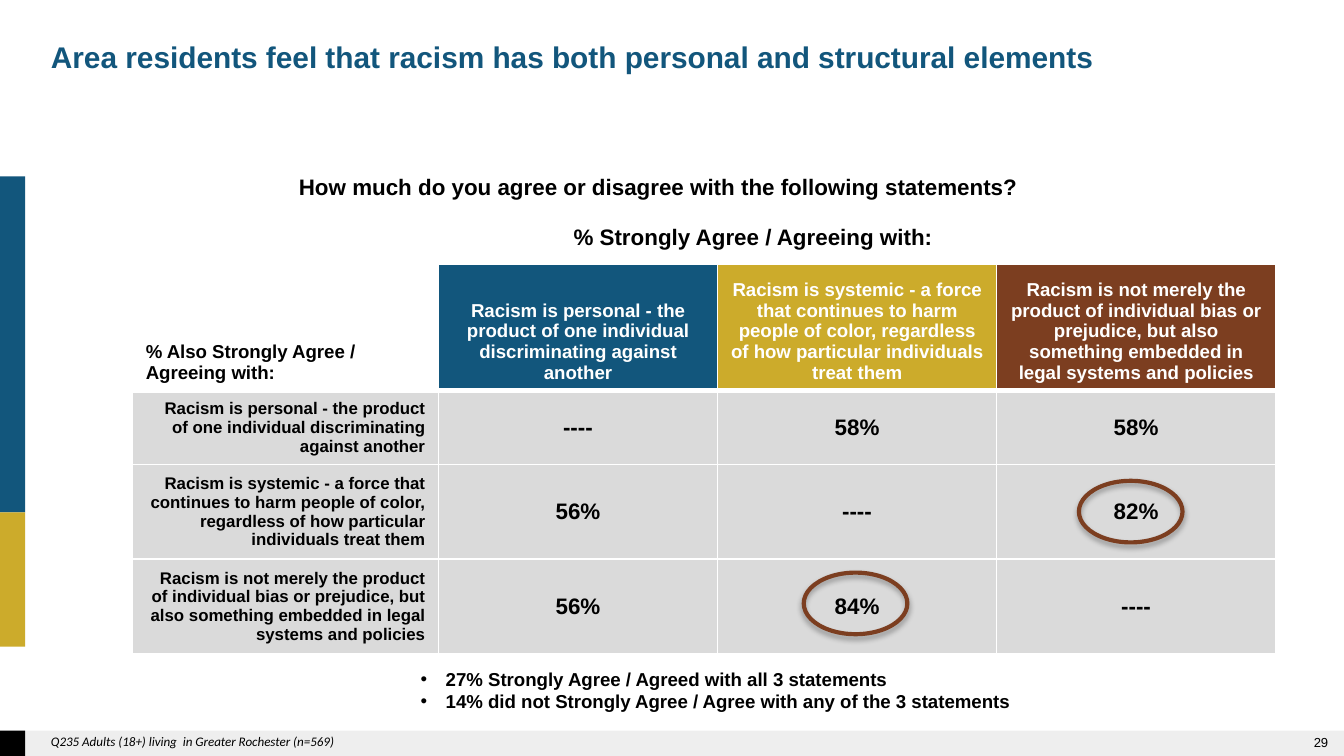
from pptx import Presentation
from pptx import util as u
from pptx.dml.color import RGBColor
from pptx.enum import shapes, text
from pptx.oxml import parse_xml
from pptx.oxml.ns import nsdecls, qn

INK = {"blue": "12567C", "gold": "CCAB2B", "rust": "7C3E20", "gray": "DADADA",
       "foot": "595959", "black": "000000", "white": "FFFFFF"}
SIDE = {"l": text.PP_ALIGN.LEFT, "c": text.PP_ALIGN.CENTER, "r": text.PP_ALIGN.RIGHT}
LEVEL = {"t": text.MSO_ANCHOR.TOP, "m": text.MSO_ANCHOR.MIDDLE, "b": text.MSO_ANCHOR.BOTTOM}


class Deck:
    """Holds the style and the current slide, and draws each kind of element."""

    def __init__(self, wide, high):
        self.show = Presentation()
        self.show.slide_width, self.show.slide_height = u.Pt(wide), u.Pt(high)
        self.slide = self.show.slides.add_slide(self.show.slide_layouts[6])
        self.shapes = self.slide.shapes

    def color(self, name):
        return RGBColor.from_string(INK[name])

    def xml(self, body):
        return parse_xml(body.replace(">", f" {nsdecls('a')}>", 1))

    def add_run(self, para, words, size, ink="black", side="l", bold=True, font="Arial"):
        para.alignment = SIDE[side]
        run = para.add_run()
        run.text = words
        run.font.name, run.font.size = font, u.Pt(size)
        run.font.bold, run.font.italic = bold, font == "Calibri"
        run.font.color.rgb = self.color(ink)

    def label(self, box, lines, size, level="t", wrap=True, bullet=False, **look):
        frame = self.shapes.add_textbox(*map(u.Pt, box)).text_frame
        frame.word_wrap, frame.vertical_anchor = wrap, LEVEL[level]
        for i, words in enumerate(lines):
            para = frame.add_paragraph() if i else frame.paragraphs[0]
            if bullet:
                props = para._p.get_or_add_pPr()
                props.set("marL", str(u.Pt(13.5)))
                props.set("indent", str(u.Pt(-13.5)))
                props.append(self.xml('<a:buFont typeface="Arial"></a:buFont>'))
                props.append(self.xml('<a:buChar char="•"></a:buChar>'))
            self.add_run(para, words, size, **look)

    def bar(self, box, ink, alpha=None):
        rect = self.shapes.add_shape(shapes.MSO_SHAPE.RECTANGLE, *map(u.Pt, box))
        rect.shadow.inherit = False
        rect.fill.solid()
        rect.fill.fore_color.rgb = self.color(ink)
        rect.line.fill.background()
        if alpha:
            tint = rect._element.spPr.find(qn("a:solidFill"))[0]
            tint.append(self.xml(f'<a:alpha val="{alpha * 1000}"></a:alpha>'))

    def ring(self, left, top):
        oval = self.shapes.add_shape(
            shapes.MSO_SHAPE.OVAL, *map(u.Pt, (left, top, 55.5, 33)))
        oval.fill.background()
        oval.line.color.rgb, oval.line.width = self.color("rust"), u.Pt(2.25)
        oval.shadow.inherit = False
        oval._element.spPr.find(qn("a:effectLst")).append(self.xml(
            f'<a:outerShdw blurRad="{u.Pt(3.1)}" dist="{u.Pt(1.8)}" dir="5400000" '
            'rotWithShape="0"><a:srgbClr val="000000"><a:alpha val="35000"/>'
            '</a:srgbClr></a:outerShdw>'))

    def cell(self, cell, words, size, fill, level, edges, **look):
        props = cell._tc.get_or_add_tcPr()
        for edge, width in zip("LRTB", edges):
            props.append(self.xml(
                f'<a:ln{edge} w="{u.Pt(width)}"><a:solidFill><a:srgbClr '
                f'val="{INK["white"]}"/></a:solidFill></a:ln{edge}>'))
        cell.fill.solid()
        cell.fill.fore_color.rgb = self.color(fill)
        cell.vertical_anchor = LEVEL[level]
        self.add_run(cell.text_frame.paragraphs[0], words, size, **look)

    def grid(self, left, top, cols, rows, corner, heads, values):
        table = self.shapes.add_table(
            len(rows), len(cols), *map(u.Pt, (left, top, sum(cols), sum(rows)))).table
        table.first_row = table.horz_banding = False
        for col, width in zip(table.columns, cols):
            col.width = u.Pt(width)
        for row, height in zip(table.rows, rows):
            row.height = u.Pt(height)
        edges = (1, 1, 1, 3)
        self.cell(table.cell(0, 0), corner, 10, "white", "b", edges)
        for i, (words, fill) in enumerate(heads, 1):
            self.cell(table.cell(0, i), words, 10, fill, "b", edges,
                      ink="white", side="c")
            rims = (1, 1, 3 if i == 1 else 1, 1)
            self.cell(table.cell(i, 0), words, 9, "gray", "m", rims, side="r")
            for j, value in enumerate(values[i - 1], 1):
                self.cell(table.cell(i, j), value, 12, "gray", "m", rims, side="c")


def main():
    deck = Deck(720, 405)
    deck.bar((0, 391.5, 720, 13.5), "foot", alpha=10)
    deck.bar((0, 94.5, 13.5, 180), "blue")
    deck.bar((0, 274.5, 13.5, 72), "gold")
    deck.bar((0, 391.5, 13.5, 13.5), "black")
    deck.label((551, 391.5, 167.6, 12.5), ["29"], 7, level="m", side="r", bold=False)
    deck.label((0, 89.5, 705.6, 21.6),
               ["How much do you agree or disagree with the following statements?"],
               12, side="c")
    deck.label((20.2, 17.3, 613.5, 36),
               ["Area residents feel that racism has both personal and structural elements"],
               16, ink="blue")
    deck.label((20.2, 389.5, 474, 15.8),
               ["Q235 Adults (18+) living  in Greater Rochester (n=569)"],
               7, bold=False, font="Calibri")
    heads = [
        ("Racism is personal - the product of one individual discriminating "
         "against another", "blue"),
        ("Racism is systemic - a force that continues to harm people of color, "
         "regardless of how particular individuals treat them", "gold"),
        ("Racism is not merely the product of individual bias or prejudice, but also "
         "something embedded in legal systems and policies", "rust"),
    ]
    values = [("----", "58%", "58%"), ("56%", "----", "82%"), ("56%", "84%", "----")]
    deck.grid(70.9, 141.8, [164] + [149.5] * 3, [67, 39.5, 50.75, 50.75],
              "% Also Strongly Agree / Agreeing with:", heads, values)
    deck.label((300.2, 116, 208.8, 21.6), ["% Strongly Agree / Agreeing with:"],
               12, wrap=False)
    deck.label((218.2, 354.2, 332.6, 31.7),
               ["27% Strongly Agree / Agreed with all 3 statements",
                "14% did not Strongly Agree / Agree with any of the 3 statements"],
               10, wrap=False, bullet=True)
    for spot in ((430.6, 306.8), (578, 257.6)):
        deck.ring(*spot)
    deck.show.save("out.pptx")


if __name__ == "__main__":
    main()
